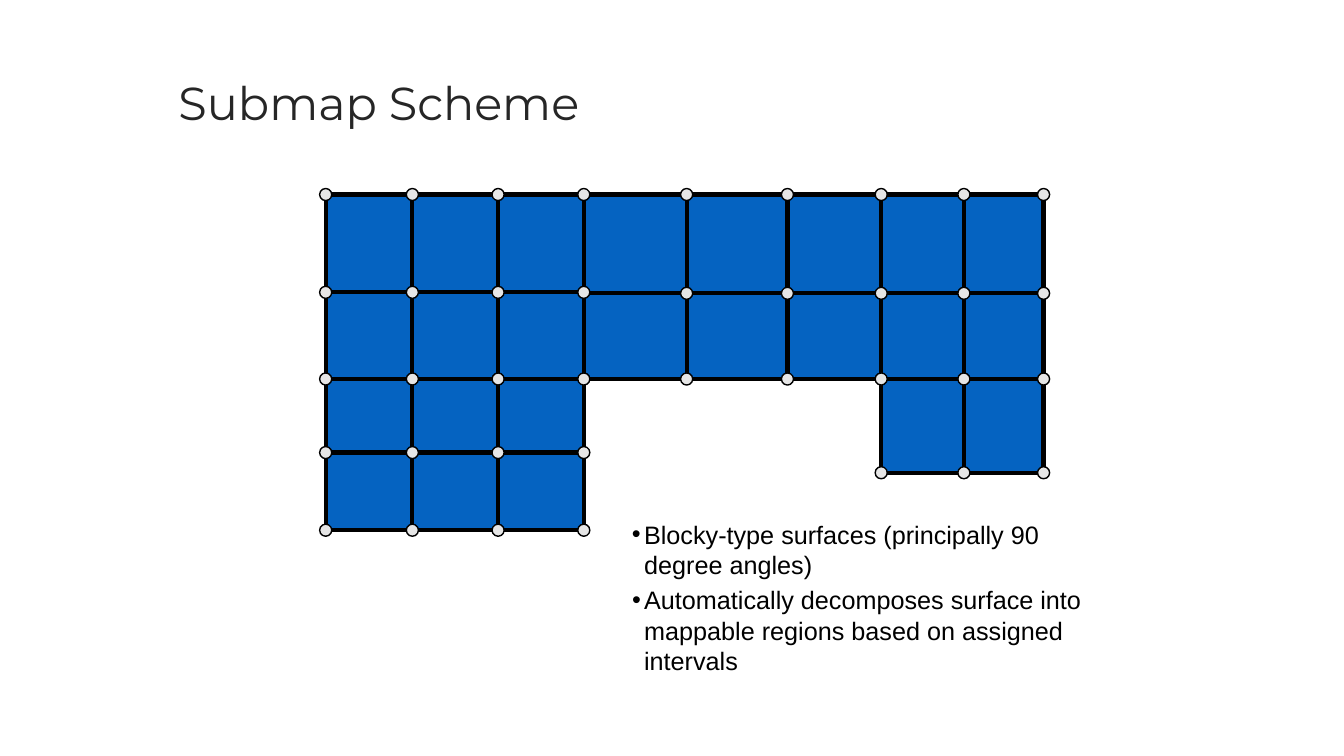
from lxml.etree import SubElement
from pptx import Presentation
from pptx.dml.color import RGBColor
from pptx.enum.shapes import MSO_CONNECTOR, MSO_SHAPE
from pptx.enum.text import MSO_ANCHOR, PP_ALIGN
from pptx.oxml.ns import qn
from pptx.util import Inches, Pt

COLORS = {"title": "262626", "fill": "0563C1", "line": "000000",
          "node": "E6E6E6", "text": "000000"}

# Grid offsets from the surface's top left corner, in inches
COLS = [0, 0.86, 1.71, 2.56, 3.58, 4.58, 5.51, 6.33, 7.12]
LEFT = [0, 0.97, 1.83, 2.56, 3.33]
RIGHT = [0, 0.98, 1.83, 2.76]
ROWS = [LEFT] * 4 + [RIGHT[:3]] * 2 + [RIGHT] * 3
NODE = 0.12


def color(name):
    return RGBColor.from_string(COLORS[name])


def paint(shape, fill, width):
    shape.shadow.inherit = False
    shape.fill.solid()
    shape.fill.fore_color.rgb = color(fill)
    shape.line.color.rgb = color("line")
    shape.line.width = Pt(width)


def add_title(slide, left, top, width, height):
    title = slide.shapes.title
    title.left, title.top = Inches(left), Inches(top)
    title.width, title.height = Inches(width), Inches(height)
    frame = title.text_frame
    frame.text = "Submap Scheme"
    frame.vertical_anchor = MSO_ANCHOR.MIDDLE
    para = frame.paragraphs[0]
    para.alignment = PP_ALIGN.LEFT
    para.line_spacing = 0.9
    font = para.runs[0].font
    font.name, font.size = "Montserrat", Pt(33)
    font.color.rgb = color("title")


def add_edge(slide, x1, y1, x2, y2):
    edge = slide.shapes.add_connector(
        MSO_CONNECTOR.STRAIGHT, Inches(x1), Inches(y1), Inches(x2), Inches(y2))
    edge.line.color.rgb = color("line")
    edge.line.width = Pt(3)
    SubElement(edge._element.spPr, qn("a:effectLst"))


def add_mesh(slide, left, top):
    # Surface outline
    foot, arch, leg = LEFT[-1], RIGHT[2], RIGHT[-1]
    corners = [(0, foot), (COLS[3], foot), (COLS[3], arch), (COLS[6], arch),
               (COLS[6], leg), (COLS[8], leg), (COLS[8], 0)]
    build = slide.shapes.build_freeform(Inches(left), Inches(top))
    build.add_line_segments(
        [(Inches(left + x), Inches(top + y)) for x, y in corners])
    paint(build.convert_to_shape(), "fill", 3)

    # Inner edges: columns reach as far as both neighbours do
    for i in range(1, len(COLS) - 1):
        end = min(rows[-1] for rows in ROWS[i - 1:i + 2])
        add_edge(slide, left + COLS[i], top, left + COLS[i], top + end)
    for first, last, y in [(0, 3, LEFT[1]), (0, 3, LEFT[2]), (0, 3, LEFT[3]),
                           (3, 8, RIGHT[1]), (6, 8, RIGHT[2])]:
        add_edge(slide, left + COLS[first], top + y,
                 left + COLS[last], top + y)

    # Nodes
    for x, rows in zip(COLS, ROWS):
        for y in rows:
            node = slide.shapes.add_shape(
                MSO_SHAPE.OVAL, Inches(left + x - NODE / 2),
                Inches(top + y - NODE / 2), Inches(NODE), Inches(NODE))
            paint(node, "node", 1)


def add_bullet(slide, text, left, top, width, height, anchor):
    box = slide.shapes.add_textbox(
        Inches(left), Inches(top), Inches(width), Inches(height))
    frame = box.text_frame
    frame.word_wrap = True
    frame.vertical_anchor = anchor
    frame.text = text
    para = frame.paragraphs[0]
    props = para._p.get_or_add_pPr()
    props.set("marL", str(Inches(0.12)))
    props.set("indent", str(-Inches(0.12)))
    SubElement(props, qn("a:buFont"), typeface="Arial")
    SubElement(props, qn("a:buChar"), char="•")
    font = para.runs[0].font
    font.name, font.size = "Arial", Pt(18)
    font.color.rgb = color("text")


def main():
    deck = Presentation()
    deck.slide_width, deck.slide_height = Inches(13.33), Inches(7.5)
    slide = deck.slides.add_slide(deck.slide_layouts[5])
    add_title(slide, 1.67, 0.67, 9.22, 0.75)
    add_mesh(slide, 3.23, 1.93)
    add_bullet(slide, "Blocky-type surfaces (principally 90 degree angles)",
               6.17, 5.1, 4.83, 0.7, MSO_ANCHOR.TOP)
    add_bullet(slide, "Automatically decomposes surface into mappable regions "
               "based on assigned intervals",
               6.17, 5.75, 4.88, 1, MSO_ANCHOR.MIDDLE)
    deck.save("out.pptx")


if __name__ == "__main__":
    main()
